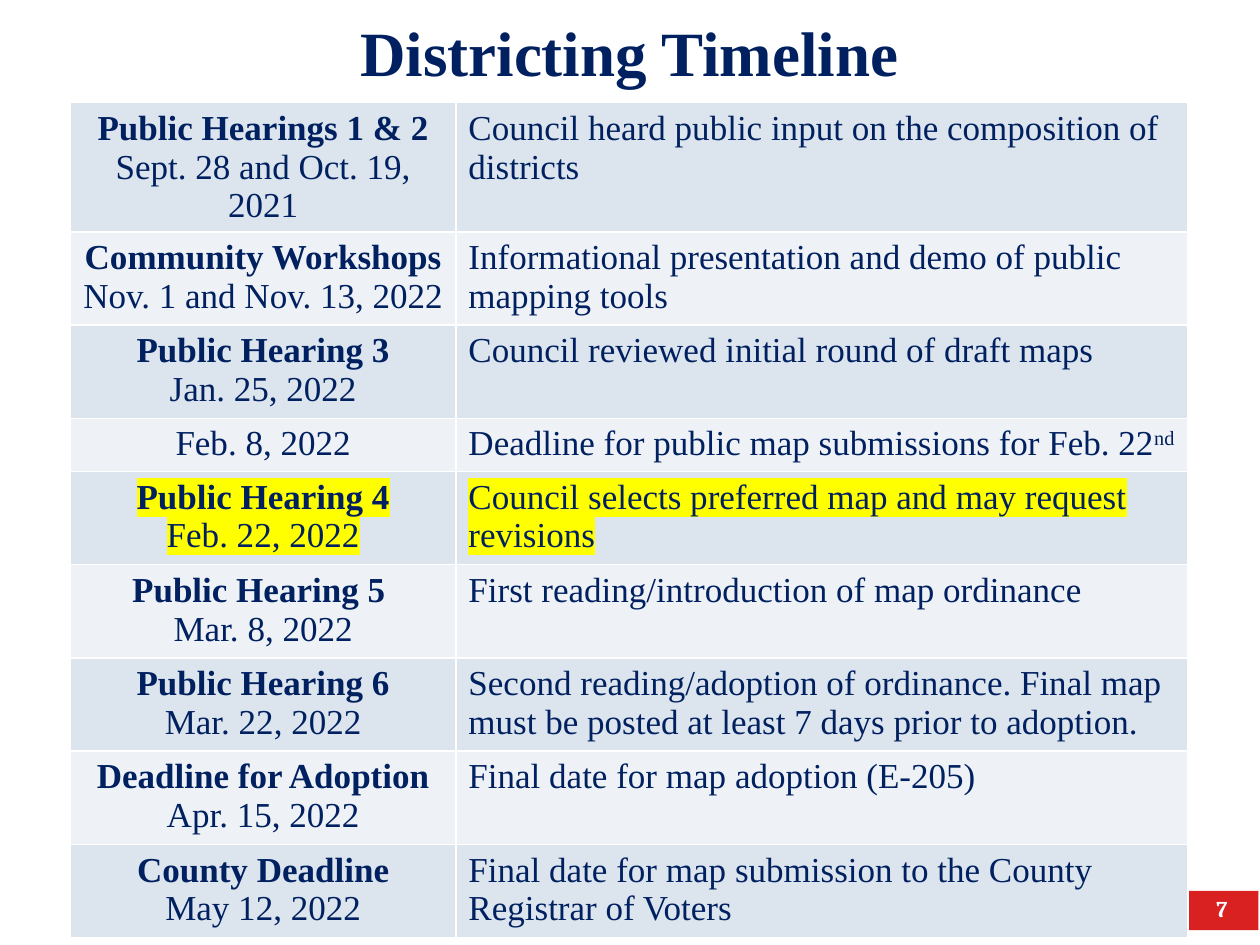
from dataclasses import dataclass

from lxml import etree
from pptx import Presentation
from pptx.dml.color import RGBColor
from pptx.enum.shapes import MSO_SHAPE
from pptx.enum.text import MSO_ANCHOR, PP_ALIGN
from pptx.oxml.ns import qn
from pptx.util import Cm, Pt

CENTER, LEFT = PP_ALIGN.CENTER, PP_ALIGN.LEFT
MIDDLE = MSO_ANCHOR.MIDDLE
RECTANGLE = MSO_SHAPE.RECTANGLE
COLORS = {
    "navy": "002060",
    "red": "D92121",
    "white": "FFFFFF",
    "dark_band": "DCE5EE",
    "light_band": "EEF2F7",
    "highlight": "FFFF00",
}
SERIF = "Times New Roman"
TITLE_FONT = {"size": Pt(36), "name": SERIF, "bold": True}
CELL_FONT = {"size": Pt(20), "name": SERIF, "bold": False}
NUMBER_FONT = {"size": Pt(12.9), "name": "Cambria", "bold": True}
COLUMN_WIDTHS = (Cm(7.77), Cm(14.76))
LINE_ROW_HEIGHTS = {1: Cm(1.07), 2: Cm(1.88)}


@dataclass
class Milestone:
    event: str
    date: str
    action: str
    ordinal: str = ""
    highlighted: bool = False


MILESTONES = [
    Milestone("Public Hearings 1 & 2", "Sept. 28 and Oct. 19, 2021",
              "Council heard public input on the composition of districts"),
    Milestone("Community Workshops", "Nov. 1 and Nov. 13, 2022",
              "Informational presentation and demo of public mapping tools"),
    Milestone("Public Hearing 3", "Jan. 25, 2022",
              "Council reviewed initial round of draft maps"),
    Milestone("", "Feb. 8, 2022",
              "Deadline for public map submissions for Feb. 22", ordinal="nd"),
    Milestone("Public Hearing 4", "Feb. 22, 2022",
              "Council selects preferred map and may request revisions",
              highlighted=True),
    Milestone("Public Hearing 5 ", "Mar. 8, 2022",
              "First reading/introduction of map ordinance"),
    Milestone("Public Hearing 6", "Mar. 22, 2022",
              "Second reading/adoption of ordinance. Final map must be posted "
              "at least 7 days prior to adoption."),
    Milestone("Deadline for Adoption", "Apr. 15, 2022",
              "Final date for map adoption (E-205)"),
    Milestone("County Deadline", "May 12, 2022",
              "Final date for map submission to the County Registrar of Voters"),
]


def rgb(color: str) -> RGBColor:
    return RGBColor.from_string(COLORS[color])


def add_run(paragraph, text: str, font_format: dict, color: str = "navy"):
    run = paragraph.add_run()
    run.text = text
    for attribute, value in font_format.items():
        setattr(run.font, attribute, value)
    run.font.color.rgb = rgb(color)
    return run


def highlight(run) -> None:
    marker = etree.Element(qn("a:highlight"))
    etree.SubElement(marker, qn("a:srgbClr"), val=COLORS["highlight"])
    run.font._element.find(qn("a:latin")).addprevious(marker)


def write_lines(cell, lines: list, alignment, highlighted: bool) -> None:
    frame = cell.text_frame
    for index, (text, bold) in enumerate(lines):
        paragraph = frame.add_paragraph() if index else frame.paragraphs[0]
        paragraph.alignment = alignment
        run = add_run(paragraph, text, CELL_FONT | {"bold": bold})
        if highlighted:
            highlight(run)


def fill_row(table, index: int, milestone: Milestone) -> None:
    when, what = table.cell(index, 0), table.cell(index, 1)
    lines = [(milestone.event, True)] if milestone.event else []
    lines.append((milestone.date, False))
    table.rows[index].height = LINE_ROW_HEIGHTS[len(lines)]
    write_lines(when, lines, CENTER, milestone.highlighted)
    write_lines(what, [(milestone.action, False)], LEFT, milestone.highlighted)
    if milestone.ordinal:
        ordinal = add_run(what.text_frame.paragraphs[0], milestone.ordinal, CELL_FONT)
        ordinal.font._element.set("baseline", "30000")
    for cell in (when, what):
        cell.fill.solid()
        cell.fill.fore_color.rgb = rgb("light_band" if index % 2 else "dark_band")


def add_timeline(slide) -> None:
    table = slide.shapes.add_table(
        len(MILESTONES), len(COLUMN_WIDTHS),
        Cm(1.42), Cm(2.07), sum(COLUMN_WIDTHS), Cm(16.11)).table
    table.first_row = table.horz_banding = False
    for column, width in zip(table.columns, COLUMN_WIDTHS):
        column.width = width
    for index, milestone in enumerate(MILESTONES):
        fill_row(table, index, milestone)


def add_title(slide) -> None:
    title = slide.shapes.title
    title.left, title.top, title.width, title.height = Cm(0.94), Cm(0.15), Cm(23.5), Cm(1.78)
    title.text_frame.vertical_anchor = MIDDLE
    paragraph = title.text_frame.paragraphs[0]
    paragraph.alignment = CENTER
    add_run(paragraph, "Districting Timeline", TITLE_FONT)


def add_page_number(slide) -> None:
    badge = slide.shapes.add_shape(RECTANGLE, Cm(23.9), Cm(17.96), Cm(1.47), Cm(0.79))
    badge.shadow.inherit = False
    badge.fill.solid()
    badge.fill.fore_color.rgb = rgb("red")
    badge.line.fill.background()
    frame = badge.text_frame
    for side in ("left", "top", "right", "bottom"):
        setattr(frame, f"margin_{side}", Cm(0.13))
    frame.vertical_anchor = MIDDLE
    paragraph = frame.paragraphs[0]
    paragraph.alignment = CENTER
    paragraph.line_spacing = 0.9
    add_run(paragraph, "7", NUMBER_FONT, "white")


def main() -> None:
    presentation = Presentation()
    presentation.slide_width, presentation.slide_height = Cm(25.4), Cm(19.05)
    slide = presentation.slides.add_slide(presentation.slide_layouts[5])
    add_page_number(slide)
    add_title(slide)
    add_timeline(slide)
    presentation.save("out.pptx")


if __name__ == "__main__":
    main()
